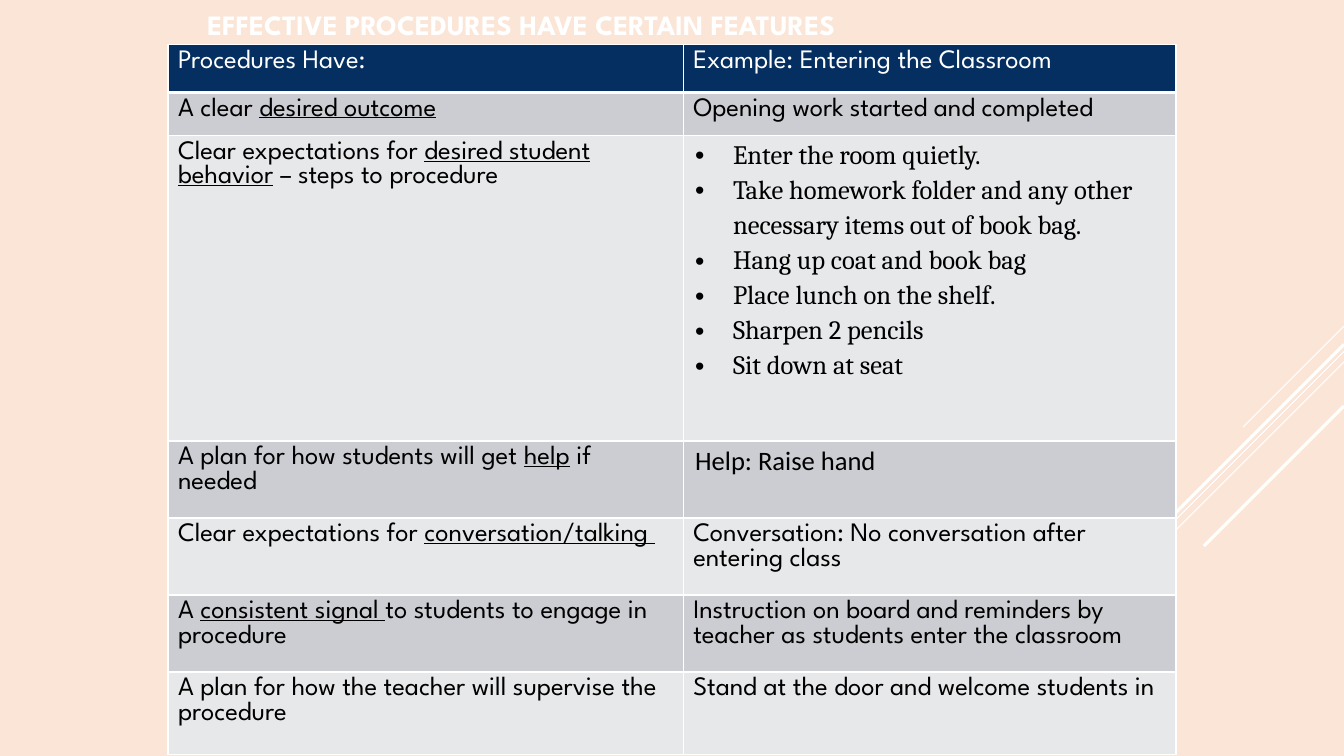
from lxml import etree
from pptx import Presentation
from pptx import util as u
from pptx.dml import color
from pptx.enum import shapes, text
from pptx.oxml import ns

Pt = u.Pt
SPARTAN = "League Spartan"
WHITE, NAVY, BLACK = "FFFFFF", "052F61", "000000"
BANDS = ["CCCDD2", "E7E8EA"]


def rgb(value):
    return color.RGBColor.from_string(value)


def sub(parent, tag, **attrs):
    return etree.SubElement(parent, ns.qn(tag), {k: str(v) for k, v in attrs.items()})


def add_run(p, words, font=SPARTAN, size=19, fill=BLACK, bold=False, underline=False):
    r = p.add_run()
    r.text = words
    r.font.name = font
    r.font.size = Pt(size)
    r.font.bold = bold
    r.font.underline = underline
    r.font.color.rgb = rgb(fill)


class Slide:
    def __init__(self, prs, background):
        self.s = prs.slides.add_slide(prs.slide_layouts[6])
        self.s.background.fill.solid()
        self.s.background.fill.fore_color.rgb = rgb(background)

    def diagonal(self, top, reach, width):
        c = self.s.shapes.add_connector(
            shapes.MSO_CONNECTOR.STRAIGHT, Pt(960), Pt(top), Pt(960 - reach), Pt(top + reach))
        c.line.color.rgb = rgb(WHITE)
        c.line.width = Pt(width)
        sub(c._element.spPr, "a:effectLst")

    def title(self, words, x, y, w, h):
        sp = self.s.shapes.add_textbox(Pt(x), Pt(y), Pt(w), Pt(h))
        tf = sp.text_frame
        tf.word_wrap = True
        tf.vertical_anchor = text.MSO_ANCHOR.MIDDLE
        add_run(tf.paragraphs[0], words, size=20, fill=WHITE, bold=True)

    def table(self, x, y, widths, heights):
        frame = self.s.shapes.add_table(
            len(heights), len(widths), Pt(x), Pt(y), Pt(sum(widths)), Pt(sum(heights)))
        table = frame.table
        table.horz_banding = False
        for column, width in zip(table.columns, widths):
            column.width = Pt(width)
        for row, height in zip(table.rows, heights):
            row.height = Pt(height)
        return table

    def style_cell(self, cell, fill, bottom=1):
        tcPr = cell._tc.get_or_add_tcPr()
        for side, width in zip("LRTB", (1, 1, 1, bottom)):
            ln = sub(tcPr, f"a:ln{side}", w=Pt(width))
            sub(sub(ln, "a:solidFill"), "a:srgbClr", val=WHITE)
        cell.fill.solid()
        cell.fill.fore_color.rgb = rgb(fill)

    def cell_text(self, cell, content, **style):
        p = cell.text_frame.paragraphs[0]
        for i, part in enumerate(content.split("_")):
            if part:
                add_run(p, part, underline=i % 2 == 1, **style)

    def cell_lines(self, cell, lines, font, bullets=False):
        cell.margin_left = cell.margin_right = Pt(8.64)
        cell.margin_top = cell.margin_bottom = 0
        tf = cell.text_frame
        for i, line in enumerate(lines):
            p = tf.add_paragraph() if i else tf.paragraphs[0]
            p.line_spacing = 1.15
            if bullets:
                pPr = p._p.get_or_add_pPr()
                pPr.set("marL", str(Pt(27)))
                pPr.set("indent", str(-Pt(27)))
                sub(pPr, "a:buFont", typeface="Arial")
                sub(pPr, "a:buChar", char="•")
            add_run(p, line, font=font)


DIAGONALS = [(233, 72, 0.75), (251, 235, 0.75), (258.5, 149, 0.75),
             (246, 137.5, 2.25), (290, 100, 2.25)]

STEPS = ["Enter the room quietly.",
         "Take homework folder and any other necessary items out of book bag.",
         "Hang up coat and book bag",
         "Place lunch on the shelf.",
         "Sharpen 2 pencils",
         "Sit down at seat"]

ROWS = [
    ("Procedures Have:", "Example: Entering the Classroom"),
    ("A clear _desired outcome_", "Opening work started and completed"),
    ("Clear expectations for _desired student behavior_ – steps to procedure", ""),
    ("A plan for how students will get _help_ if needed", ""),
    ("Clear expectations for _conversation/talking _",
     "Conversation: No conversation after entering class"),
    ("A _consistent signal _to students to engage in procedure",
     "Instruction on board and reminders by teacher as students enter the classroom"),
    ("A plan for how the teacher will supervise the procedure",
     "Stand at the door and welcome students in"),
]


def main():
    prs = Presentation()
    prs.slide_width, prs.slide_height = Pt(960), Pt(540)
    slide = Slide(prs, "FAE5D7")
    for diagonal in DIAGONALS:
        slide.diagonal(*diagonal)
    slide.title("EFFECTIVE PROCEDURES HAVE CERTAIN FEATURES", 141, 2.5, 687, 30)

    table = slide.table(120, 32, [368, 352], [34, 31, 218, 55, 55, 55, 59])
    for i, row in enumerate(ROWS):
        header = i == 0
        for j, content in enumerate(row):
            cell = table.cell(i, j)
            slide.style_cell(cell, NAVY if header else BANDS[(i - 1) % 2], 3 if header else 1)
            slide.cell_text(cell, content, fill=WHITE if header else BLACK)
    slide.cell_lines(table.cell(2, 1), STEPS, "Cambria", bullets=True)
    slide.cell_lines(table.cell(3, 1), ["Help: Raise hand"], "Calibri")
    prs.save("out.pptx")


if __name__ == "__main__":
    main()
